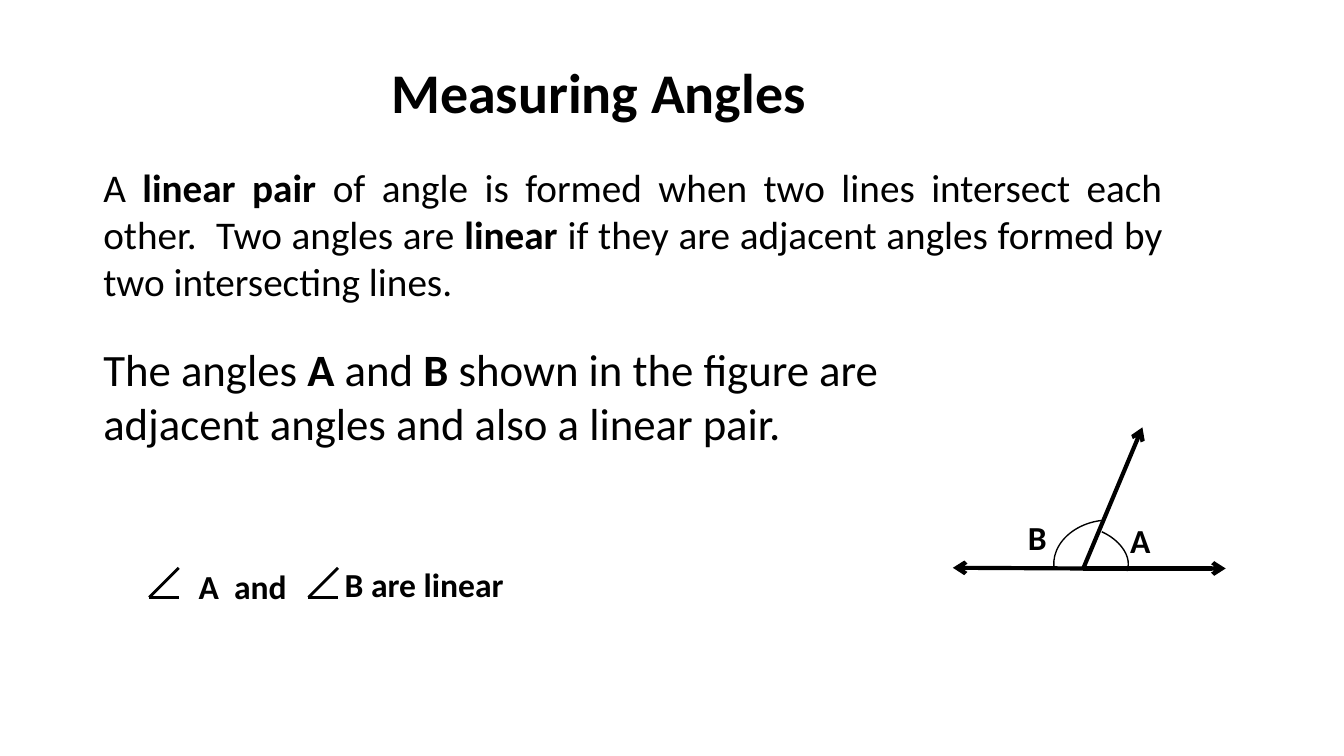
from dataclasses import dataclass

from pptx import Presentation
from pptx.dml.color import RGBColor as Rgb
from pptx.enum.shapes import MSO_CONNECTOR as Link, MSO_SHAPE as Form
from pptx.enum.text import MSO_ANCHOR as Anchor, PP_ALIGN as Align
from pptx.oxml.ns import qn
from pptx.util import Inches, Pt
from lxml.etree import SubElement as Sub


@dataclass(frozen=True)
class Theme:
    ink: Rgb = Rgb(0, 0, 0)
    paper: Rgb = Rgb(255, 255, 255)
    face: str = "Calibri"
    title: float = 30
    body: float = 21
    lead: float = 24
    label: float = 18
    ray: float = 2.25
    sign: float = 1.5
    arc: float = 0.75


class Board:
    """Draws on one 16:9 slide with a grid of 100 columns whose cells are square."""

    def __init__(self, theme, cols=100):
        self.theme = theme
        self.deck = Presentation()
        self.deck.slide_width = Inches(10)
        self.deck.slide_height = Inches(10) * 9 // 16
        self.cell = self.deck.slide_width / cols
        self.slide = self.deck.slides.add_slide(self.deck.slide_layouts[6])
        fill = self.slide.background.fill
        fill.solid()
        fill.fore_color.rgb = theme.paper

    def span(self, *cells):
        return [round(n * self.cell) for n in cells]

    def text(self, box, words, size, bold=False, align=Align.LEFT, anchor=Anchor.TOP, wrap=True):
        frame = self.slide.shapes.add_textbox(*self.span(*box)).text_frame
        frame.word_wrap = wrap
        frame.vertical_anchor = anchor
        par = frame.paragraphs[0]
        par.alignment = align
        font = par.font
        font.name, font.size, font.bold = self.theme.face, Pt(size), bold
        font.color.rgb = self.theme.ink
        for turn, part in enumerate(words.split("*")):
            run = par.add_run()
            run.text = part
            if turn % 2:
                run.font.bold = True

    def line(self, start, end, width, arrow=False):
        line = self.slide.shapes.add_connector(Link.STRAIGHT, *self.span(*start, *end))
        line.line.color.rgb = self.theme.ink
        line.line.width = Pt(width)
        if arrow:
            Sub(line.line._get_or_add_ln(), qn("a:tailEnd"), type="arrow")
        Sub(line._element.spPr, qn("a:effectLst"))

    def sign(self, left, low, side=2.2):
        for rise in (side, 0):
            self.line((left, low), (left + side, low - rise), self.theme.sign)

    def arc(self, box, turn, flip=False):
        arc = self.slide.shapes.add_shape(Form.ARC, *self.span(*box))
        arc.shadow.inherit = False
        arc.fill.background()
        arc.line.color.rgb = self.theme.ink
        arc.line.width = Pt(self.theme.arc)
        arc.rotation = turn
        if flip:
            arc._element.spPr.xfrm.set("flipH", "1")

    def save(self):
        self.deck.save("out.pptx")


def main():
    look = Theme()
    board = Board(look)
    board.text((8.3, 1.5, 72.5, 10.6), "Measuring Angles", look.title, True,
               Align.CENTER, Anchor.MIDDLE)
    board.text((6.7, 11.65, 80.8, 44.6),
               "A* linear pair *of angle is formed when two lines intersect each other.  "
               "Two angles are *linear *if they are adjacent angles formed by "
               "two intersecting lines.", look.body, align=Align.JUSTIFY)
    board.text((6.7, 24.95, 67.5, 13.1),
               "The angles *A *and *B *shown in the figure are adjacent angles "
               "and also a linear pair.", look.lead)

    for left in (11.1, 22.95):
        board.sign(left, 44.45)
    board.text((13.8, 41.65, 9.2, 4), "A  and", look.label, True, wrap=False)
    for left, top, wide, words in (
        (24.1, 41.45, 20.9, " B are linear"),
        (83.1, 38.2, 5.6, "A"),
        (75.5, 38, 5.6, "B"),
    ):
        board.text((left, top, wide, 4), words, look.label, True)

    for tip in ((85, 31.8), (91.2, 42.3), (70.9, 42.25)):
        board.line((80.6, 42.3), tip, look.ray, True)
    board.arc((78.3, 39.4, 5.8, 3.8), 24.3)
    board.arc((78.4, 38.7, 8, 6.3), 355.3, True)
    board.save()


if __name__ == "__main__":
    main()
